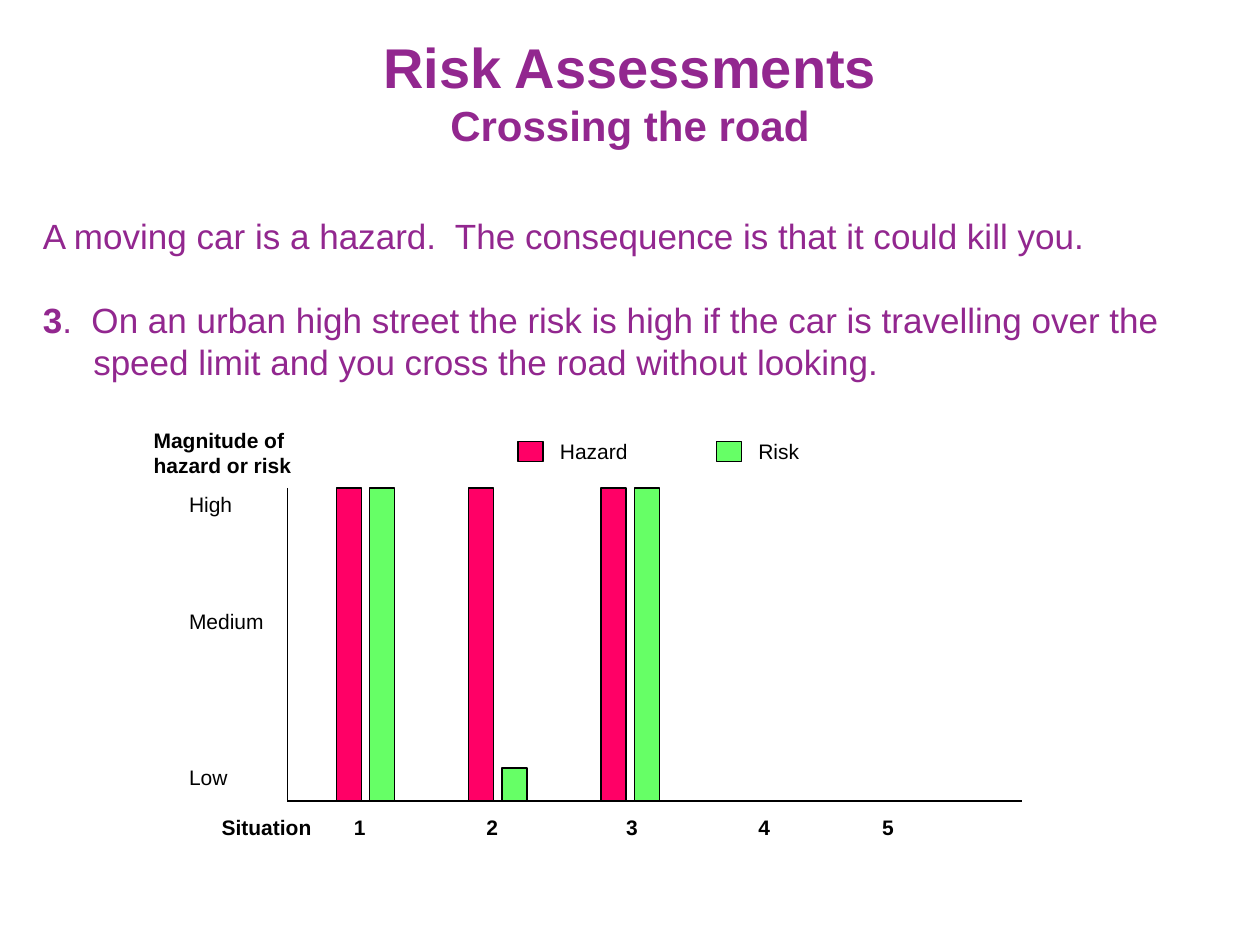
import dataclasses
import pptx
import pptx.dml.color
import pptx.enum.shapes
import pptx.enum.text
import pptx.oxml.ns
import pptx.util
from lxml import etree

Pt = pptx.util.Pt


def rgb(code):
    return pptx.dml.color.RGBColor.from_string(code)


@dataclasses.dataclass(frozen=True)
class Theme:
    face: str = "Arial"
    plum: str = "92278F"
    ink: str = "000000"
    hazard: str = "FF0066"
    risk: str = "66FF66"
    title: int = 32
    sub: int = 24
    body: int = 20
    label: int = 12
    line: float = 0.75


THEME = Theme()
LEFT, TOP, BASE, RIGHT = 164.2, 278.8, 457.8, 584
BAR, STEP, PAIR = 14.4, 75.6, 19
FIRST = 192.2
LOW, HIGH = 19, 179
LEVELS = [(HIGH, HIGH), (HIGH, LOW), (HIGH, HIGH)]
SCALE = [("High", 278.6), ("Medium", 345.6), ("Low", 434.9)]
TICKS = [197.3, 272.9, 352.8, 428.4, 499]
KEYS = [("Hazard", THEME.hazard, 296), ("Risk", THEME.risk, 409.4)]


def style(para, size, color, bold=False):
    for run in para.runs:
        font = run.font
        font.name = THEME.face
        font.size = Pt(size)
        font.bold = bold
        font.color.rgb = rgb(color)


def place(shape, x, y, w, h):
    shape.left, shape.top, shape.width, shape.height = Pt(x), Pt(y), Pt(w), Pt(h)
    frame = shape.text_frame
    frame.auto_size = pptx.enum.text.MSO_AUTO_SIZE.NONE
    frame.vertical_anchor = pptx.enum.text.MSO_ANCHOR.TOP
    return frame


def add_title(slide):
    frame = place(slide.shapes.title, 211.7, 15.1, 296.6, 74.2)
    frame.word_wrap = False
    frame.text = "Risk Assessments\nCrossing the road"
    for para, size in zip(frame.paragraphs, (THEME.title, THEME.sub)):
        para.alignment = pptx.enum.text.PP_ALIGN.CENTER
        para.space_before = Pt(0)
        style(para, size, THEME.plum, True)


def add_body(slide):
    frame = place(slide.placeholders[1], 17.3, 118.8, 691.9, 127.4)
    frame.word_wrap = True
    frame.text = "A moving car is a hazard.  The consequence is that it could kill you.\n3"
    point = frame.paragraphs[1]
    point.add_run().text = (
        ".  On an urban high street the risk is high if the car is travelling "
        "over the speed limit and you cross the road without looking."
    )
    for para, gap in zip(frame.paragraphs, (0, 24)):
        para.space_before = Pt(gap)
        props = para._p.get_or_add_pPr()
        props.set("marL", str(Pt(28.8)))
        props.set("indent", str(-Pt(28.8)))
        etree.SubElement(props, pptx.oxml.ns.qn("a:buNone"))
        style(para, THEME.body, THEME.plum)
    point.runs[0].font.bold = True


def add_label(slide, text, x, y, w, h=19.4, bold=False):
    frame = place(slide.shapes.add_textbox(0, 0, 0, 0), x, y, w, h)
    frame.word_wrap = True
    frame.margin_left = frame.margin_right = Pt(5)
    frame.margin_top = frame.margin_bottom = Pt(2.2)
    frame.text = text
    for para in frame.paragraphs:
        style(para, THEME.label, THEME.ink, bold)


def add_block(slide, x, y, h, color):
    kind = pptx.enum.shapes.MSO_SHAPE.RECTANGLE
    block = slide.shapes.add_shape(kind, Pt(x), Pt(y), Pt(BAR), Pt(h))
    block.shadow.inherit = False
    block.fill.solid()
    block.fill.fore_color.rgb = rgb(color)
    block.line.color.rgb = rgb(THEME.ink)
    block.line.width = Pt(THEME.line)


def add_axis(slide, *ends):
    kind = pptx.enum.shapes.MSO_CONNECTOR.STRAIGHT
    axis = slide.shapes.add_connector(kind, *map(Pt, ends))
    axis.line.color.rgb = rgb(THEME.ink)
    axis.line.width = Pt(THEME.line)
    etree.SubElement(axis._element.spPr, pptx.oxml.ns.qn("a:effectLst"))


def add_graph(slide):
    add_axis(slide, LEFT, TOP, LEFT, BASE)
    add_axis(slide, LEFT, BASE, RIGHT, BASE)
    add_label(slide, "Magnitude of\nhazard or risk", 82.8, 241.9, 131, 33.8, True)
    for text, y in SCALE:
        add_label(slide, text, 103, y, 82)
    add_label(slide, "Situation", 121.7, 463, 88.6, bold=True)
    for num, x in enumerate(TICKS, 1):
        add_label(slide, str(num), x, 463, 20.2, bold=True)
    for num, pair in enumerate(LEVELS):
        for side, (size, key) in enumerate(zip(pair, KEYS)):
            x = FIRST + num * STEP + side * PAIR
            add_block(slide, x, BASE - size, size, key[1])
    for text, color, x in KEYS:
        add_block(slide, x, 252.4, 11.5, color)
        add_label(slide, text, x + 19, 248.4, 77)


def main():
    deck = pptx.Presentation()
    deck.slide_width, deck.slide_height = Pt(720), Pt(540)
    slide = deck.slides.add_slide(deck.slide_layouts[1])
    add_title(slide)
    add_body(slide)
    add_graph(slide)
    deck.save("out.pptx")


if __name__ == "__main__":
    main()
